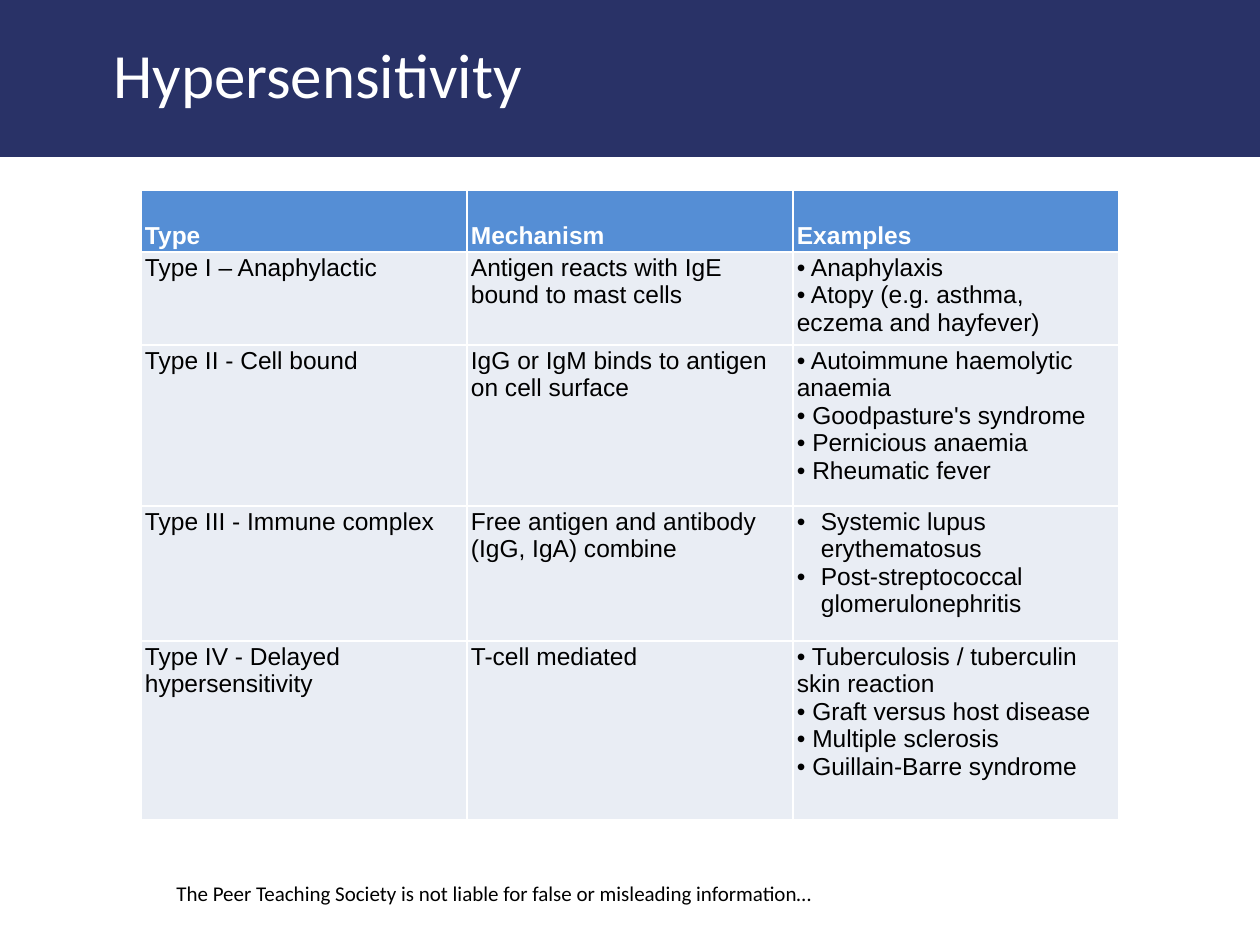
from lxml import etree
from pptx import Presentation, util as u
from pptx.dml.color import RGBColor
from pptx.enum import shapes, text
from pptx.oxml.ns import qn

PX = 914400 // 126
WHITE, BLACK, NAVY, BLUE, PALE = "FFFFFF", "000000", "293267", "558ED5", "E9EDF4"


def paint(target, color):
    """Fill a shape or cell with a solid colour."""
    target.fill.solid()
    target.fill.fore_color.rgb = RGBColor.from_string(color)


def write(para, words, color, **formats):
    span = para.add_run()
    span.text = words
    span.font.color.rgb = RGBColor.from_string(color)
    for name, value in formats.items():
        setattr(span.font, name, value)


deck = Presentation()
deck.slide_width, deck.slide_height = 1260 * PX, 945 * PX
page = deck.slides.add_slide(deck.slide_layouts[6])

banner = page.shapes.add_shape(shapes.MSO_SHAPE.RECTANGLE, 0, 0, 1260 * PX, 157 * PX)
banner.shadow.inherit = False
banner.line.fill.background()
paint(banner, NAVY)

labels = [
    ("The Peer Teaching Society is not liable for false or misleading information…",
     (164, 874, 698, 38), 12, BLACK),
    ("Hypersensitivity", (101, 29, 644, 89), 36, WHITE),
]
for words, place, size, color in labels:
    box = page.shapes.add_textbox(*(length * PX for length in place))
    box.text_frame.word_wrap = True
    write(box.text_frame.paragraphs[0], words, color, name="Calibri", size=u.Pt(size))

# Each cell is a list of lines; the Type III examples hang from their bullets.
rows = [
    (62, ["Type"], ["Mechanism"], ["Examples"]),
    (93, ["Type I – Anaphylactic"], ["Antigen reacts with IgE bound to mast cells"],
     ["• Anaphylaxis", "• Atopy (e.g. asthma, eczema and hayfever)"]),
    (161, ["Type II - Cell bound"], ["IgG or IgM binds to antigen on cell surface"],
     ["• Autoimmune haemolytic anaemia", "• Goodpasture's syndrome",
      "• Pernicious anaemia", "• Rheumatic fever"]),
    (135, ["Type III - Immune complex"], ["Free antigen and antibody (IgG, IgA) combine"],
     ["Systemic lupus erythematosus", "Post-streptococcal glomerulonephritis"]),
    (179, ["Type IV - Delayed hypersensitivity"], ["T-cell mediated"],
     ["• Tuberculosis / tuberculin skin reaction", "• Graft versus host disease",
      "• Multiple sclerosis", "• Guillain-Barre syndrome"]),
]
HANGING_CELL = (3, 2)
HANG = 24 * PX
cell_format = {"margin_left": 4 * PX, "margin_right": 4 * PX,
               "margin_top": 2 * PX, "margin_bottom": 2 * PX}

table = page.shapes.add_table(len(rows), 3, 141 * PX, 190 * PX, 978 * PX, 630 * PX).table
for column in table.columns:
    column.width = 326 * PX

for r, (height, *cells) in enumerate(rows):
    table.rows[r].height = height * PX
    header = r == 0
    for c, lines in enumerate(cells):
        cell = table.cell(r, c)
        for name, value in cell_format.items():
            setattr(cell, name, value)
        cell.vertical_anchor = text.MSO_ANCHOR.BOTTOM if header else text.MSO_ANCHOR.TOP

        props = cell._tc.get_or_add_tcPr()
        for side in ("lnL", "lnR", "lnT", "lnB"):
            border = etree.SubElement(props, qn(f"a:{side}"), w=str(u.Pt(1)))
            fill = etree.SubElement(border, qn("a:solidFill"))
            etree.SubElement(fill, qn("a:srgbClr"), val=WHITE)
        paint(cell, BLUE if header else PALE)

        frame = cell.text_frame
        for i, line in enumerate(lines):
            para = frame.add_paragraph() if i else frame.paragraphs[0]
            if (r, c) == HANGING_CELL:
                layout = para._p.get_or_add_pPr()
                layout.set("marL", str(HANG))
                layout.set("indent", str(-HANG))
                etree.SubElement(layout, qn("a:buFont"), typeface="Arial")
                etree.SubElement(layout, qn("a:buChar"), char="•")
            write(para, line, WHITE if header else BLACK,
                  name="Arial", size=u.Pt(14), bold=header)

deck.save("out.pptx")
